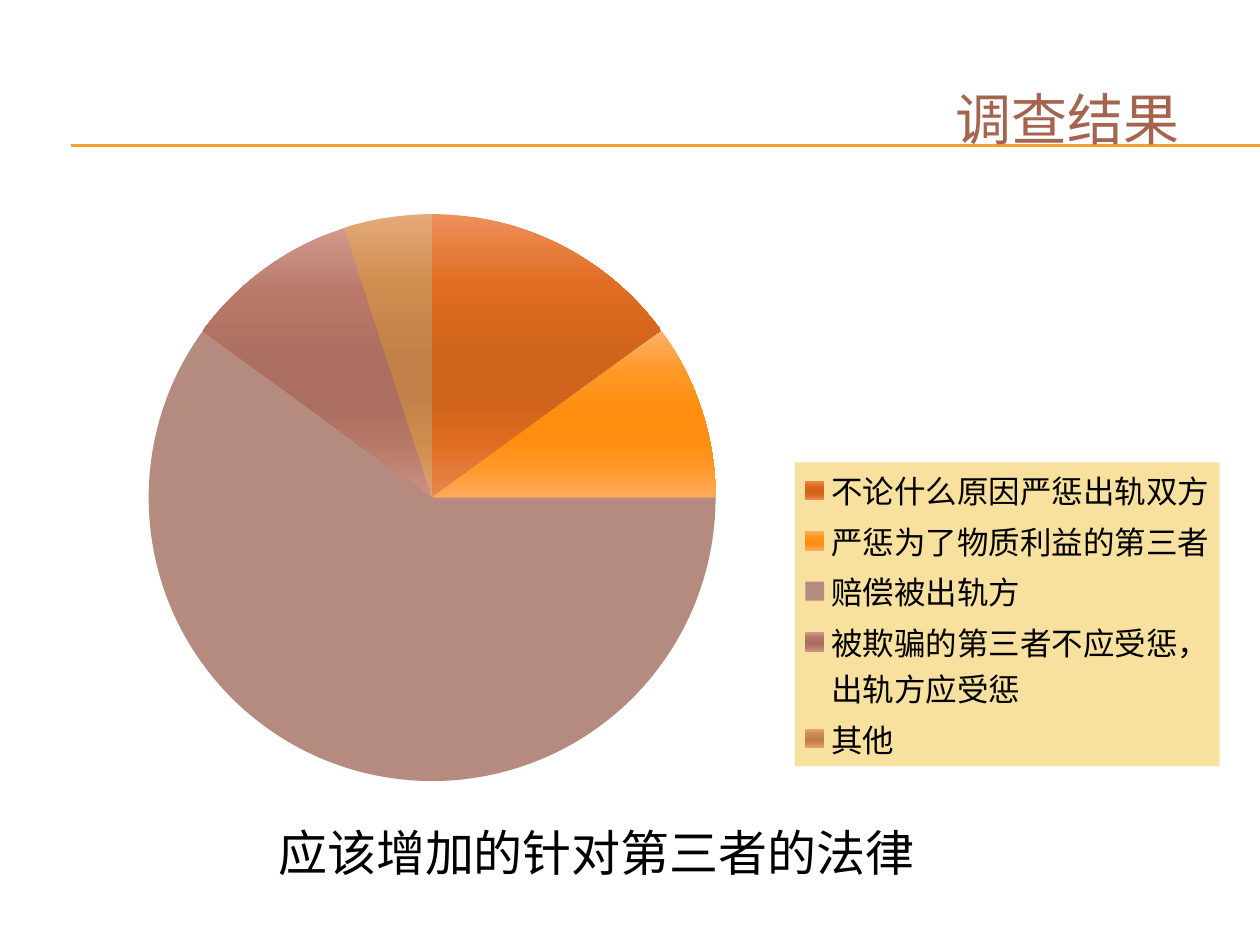
from lxml.etree import SubElement
from pptx import Presentation
from pptx.chart.data import CategoryChartData
from pptx.dml.color import RGBColor
from pptx.enum.chart import XL_CHART_TYPE as ChartType, XL_LEGEND_POSITION as LegendPosition
from pptx.enum.shapes import MSO_CONNECTOR as Connector
from pptx.enum.text import PP_ALIGN as Align
from pptx.oxml import parse_xml
from pptx.oxml.ns import nsdecls, qn
from pptx.util import Inches, Pt

GOLD = RGBColor(0xF0, 0xA2, 0x2E)
BROWN = RGBColor(0xA5, 0x64, 0x4E)
BLACK = RGBColor(0, 0, 0)
ROSE = RGBColor(0xB5, 0x8B, 0x80)
LEGEND_FILL = RGBColor(0xF8, 0xE0, 0x9E)

ANSWERS = {
    "不论什么原因严惩出轨双方": 15,
    "严惩为了物质利益的第三者": 10,
    "赔偿被出轨方": 60,
    "被欺骗的第三者不应受惩，出轨方应受惩": 10,
    "其他": 5,
}
STOPS = (0, 25, 50, 65, 80, 100)
SHADES = {
    0: "EE8F5B E06D21 D0641C D0641C DE6C20 E88852",
    1: "FFB16A FF9826 FF8D0F FF8D0F FF9724 FFAA5C",
    3: "D09A8D B97869 AB6E60 AB6E60 B87868 CA9386",
    4: "E4A97A D08D50 C18148 C18148 CF8C4F DEA372",
}
CHART_BOX = (0.62, 1.56, 9.06, 4.78)
PIE_BOX = (1.18, 1.7, 4.5, 4.5)
LEGEND_BOX = (6.31, 3.67, 3.37, 2.41)


def add_rule(slide, y):
    """Draw a thin gold line from the left margin to the slide's right edge."""
    rule = slide.shapes.add_connector(
        Connector.STRAIGHT, Inches(0.56), Inches(y), Inches(10), Inches(y))
    rule.line.color.rgb = GOLD
    rule.line.width = Pt(0.75)
    SubElement(rule._element.spPr, qn("a:effectLst"))


def add_label(slide, box, text, size, color, align):
    """Add one line of Arial text."""
    frame = slide.shapes.add_textbox(*map(Inches, box)).text_frame
    frame.word_wrap = True
    label = frame.paragraphs[0]
    label.text = text
    label.alignment = align
    font = label.runs[0].font
    font.name, font.size = "Arial", Pt(size)
    font.color.rgb = color


def manual_layout(box, inner=False):
    """Return a chart layout that puts a part at a box given in slide inches."""
    left, top, width, height = CHART_BOX
    places = {
        "x": (box[0] - left) / width,
        "y": (box[1] - top) / height,
        "w": box[2] / width,
        "h": box[3] / height,
    }
    target = '<c:layoutTarget val="inner"/>' if inner else ""
    modes = '<c:xMode val="edge"/><c:yMode val="edge"/>'
    values = "".join(f'<c:{key} val="{place:.4f}"/>' for key, place in places.items())
    return parse_xml(f'<c:layout {nsdecls("c")}><c:manualLayout>{target}{modes}{values}'
                     "</c:manualLayout></c:layout>")


def shade_slice(pie_slice, shades):
    """Fill a slice with a top-to-bottom gradient."""
    pie_slice.format.fill.gradient()
    gradient = pie_slice.format._element.find(".//" + qn("a:gradFill")) \
        if hasattr(pie_slice.format, "_element") else \
        pie_slice.format.fill._xPr.find(qn("a:gradFill"))
    stops = "".join(f'<a:gs pos="{stop * 1000}"><a:srgbClr val="{shade}"/></a:gs>'
                    for stop, shade in zip(STOPS, shades.split()))
    gradient.getparent().replace(gradient, parse_xml(
        f'<a:gradFill {nsdecls("a")} rotWithShape="1"><a:gsLst>{stops}</a:gsLst>'
        '<a:lin ang="5400000" scaled="0"/></a:gradFill>'))


def style_legend(chart):
    """Place the legend at the right on a pale yellow panel."""
    chart.has_legend = True
    legend = chart.legend
    legend.position = LegendPosition.RIGHT
    legend.include_in_layout = False
    legend.font.size = Pt(18)
    legend.font.name = "Lato"
    legend.font.color.rgb = BLACK
    element = legend._element
    for old in element.findall(qn("c:layout")):
        element.remove(old)
    element.find(qn("c:legendPos")).addnext(manual_layout(LEGEND_BOX))
    element.find(qn("c:txPr")).addprevious(parse_xml(
        f'<c:spPr {nsdecls("c", "a")}><a:solidFill><a:srgbClr val="{LEGEND_FILL}"/>'
        "</a:solidFill><a:ln><a:noFill/></a:ln></c:spPr>"))


def add_survey_pie(slide):
    """Add the pie chart of survey answers."""
    survey = CategoryChartData()
    survey.categories = list(ANSWERS)
    survey.add_series("Series 1", list(ANSWERS.values()))
    chart = slide.shapes.add_chart(
        ChartType.PIE, *map(Inches, CHART_BOX), survey).chart
    chart.has_title = False
    chart.font.name, chart.font.size = "Lato", Pt(10)
    chart.font.color.rgb = BLACK
    plot = chart.plots[0]
    plot.vary_by_categories = True
    for index in range(len(ANSWERS)):
        pie_slice = plot.series[0].points[index]
        pie_slice.format.line.fill.background()
        if index in SHADES:
            shade_slice(pie_slice, SHADES[index])
        else:
            pie_slice.format.fill.solid()
            pie_slice.format.fill.fore_color.rgb = ROSE
    plot_area = plot._element.getparent()
    for old in plot_area.findall(qn("c:layout")):
        plot_area.remove(old)
    plot_area.insert(0, manual_layout(PIE_BOX, inner=True))
    style_legend(chart)


def main():
    """Build and save the survey slide."""
    deck = Presentation()
    deck.slide_width, deck.slide_height = Inches(10), Inches(7.5)
    slide = deck.slides.add_slide(deck.slide_layouts[6])
    for y in (1.15, 1.16):
        add_rule(slide, y)
    add_label(slide, (2.11, 6.48, 6.02, 0.8), "应该增加的针对第三者的法律", 28, BLACK, Align.LEFT)
    add_survey_pie(slide)
    add_label(slide, (6.41, 0.62, 3.05, 0.64), "调查结果", 32, BROWN, Align.RIGHT)
    deck.save("out.pptx")


if __name__ == "__main__":
    main()
